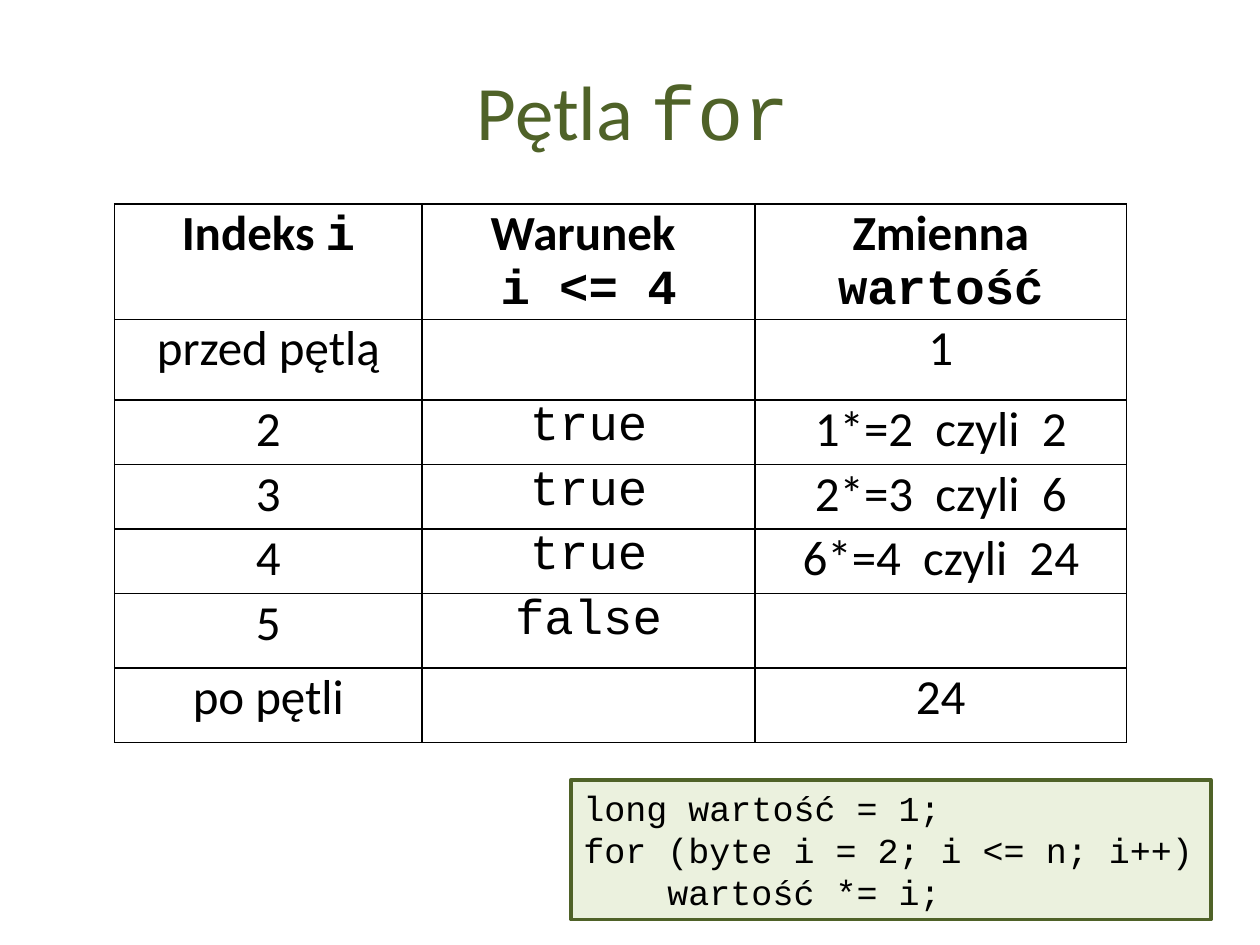
"""Builds the slide that traces a for loop computing a factorial."""
from lxml.etree import SubElement
from pptx import Presentation
from pptx.dml.color import RGBColor
from pptx.enum.shapes import MSO_SHAPE as Preset
from pptx.enum.text import MSO_ANCHOR as Anchor, MSO_AUTO_SIZE as AutoSize, PP_ALIGN as Align
from pptx.oxml.ns import qn
from pptx.util import Cm, Pt

COLORS = {"accent": "4F6228", "code_fill": "EBF1DE", "ink": "000000"}
BODY, CODE = "Calibri", "Courier New"
COLUMN_WIDTHS = [6.2, 6.71, 7.49]
ROW_HEIGHTS = [2.31, 1.63, 1.3, 1.3, 1.3, 1.5, 1.5]
HEADINGS = [
    [("Indeks ", BODY), ("i", CODE)],
    [("Warunek \n", BODY), ("i <= 4", CODE)],
    [("Zmienna ", BODY), ("wartość", CODE)],
]
TRACE = [
    ("przed pętlą", "", "1"),
    ("2", "true", "1*=2  czyli  2"),
    ("3", "true", "2*=3  czyli  6"),
    ("4", "true", "6*=4  czyli  24"),
    ("5", "false", ""),
    ("po pętli", "", "24"),
]
LOOP_CODE = "long wartość = 1;\nfor (byte i = 2; i <= n; i++)\n    wartość *= i;"


def color(name):
    return RGBColor.from_string(COLORS[name])


def style_font(font, face, size, ink, bold=False):
    font.name, font.size, font.bold = face, Pt(size), bold
    font.color.rgb = color(ink)


def write_pieces(paragraph, pieces, size, ink, bold=False):
    paragraph.alignment = Align.CENTER
    for text, face in pieces:
        run = paragraph.add_run()
        run.text = text.rstrip("\n")
        style_font(run.font, face, size, ink, bold)
        if text.endswith("\n"):
            paragraph.add_line_break()


def add_title(slide):
    title = slide.shapes.title
    title.left, title.top, title.width, title.height = Cm(0.51), Cm(1.3), Cm(24.51), Cm(1.83)
    frame = title.text_frame
    frame.auto_size = AutoSize.NONE
    frame.vertical_anchor = Anchor.MIDDLE
    write_pieces(frame.paragraphs[0], [("Pętla ", BODY), ("for", CODE)], 44, "accent")


def add_borders(cell):
    properties = cell._tc.get_or_add_tcPr()
    for side in ("a:lnL", "a:lnR", "a:lnT", "a:lnB"):
        border = SubElement(properties, qn(side), w=str(Pt(1)))
        fill = SubElement(border, qn("a:solidFill"))
        SubElement(fill, qn("a:srgbClr"), val=COLORS["ink"])


def fill_cell(cell, pieces, bold):
    cell.margin_left = cell.margin_right = Cm(0.18)
    cell.margin_top = cell.margin_bottom = 0
    add_borders(cell)
    cell.fill.background()
    paragraph = cell.text_frame.paragraphs[0]
    paragraph.space_after = Pt(6)
    write_pieces(paragraph, pieces, 28, "ink", bold)


def add_trace_table(slide):
    faces = (BODY, CODE, BODY)
    rows = [HEADINGS] + [
        [[(text, face)] if text else [] for text, face in zip(step, faces)] for step in TRACE
    ]
    table = slide.shapes.add_table(
        len(rows), len(COLUMN_WIDTHS), Cm(2.31), Cm(4.11),
        Cm(sum(COLUMN_WIDTHS)), Cm(sum(ROW_HEIGHTS)),
    ).table
    table.first_row = table.horz_banding = False
    for column, width in zip(table.columns, COLUMN_WIDTHS):
        column.width = Cm(width)
    for index, (row, height, contents) in enumerate(zip(table.rows, ROW_HEIGHTS, rows)):
        row.height = Cm(height)
        for cell, pieces in zip(row.cells, contents):
            fill_cell(cell, pieces, bold=index == 0)


def add_code_box(slide):
    listing = slide.shapes.add_shape(Preset.RECTANGLE, Cm(11.51), Cm(15.72), Cm(12.9), Cm(2.82))
    listing.shadow.inherit = False
    listing.fill.solid()
    listing.fill.fore_color.rgb = color("code_fill")
    listing.line.color.rgb = color("accent")
    listing.line.width = Pt(2)
    frame = listing.text_frame
    frame.text = LOOP_CODE
    frame.word_wrap = False
    frame.auto_size = AutoSize.SHAPE_TO_FIT_TEXT
    for paragraph in frame.paragraphs:
        paragraph.alignment = Align.LEFT
        style_font(paragraph.runs[0].font, CODE, 20, "ink")


def main():
    deck = Presentation()
    deck.slide_width, deck.slide_height = Cm(25.4), Cm(19.05)
    slide = deck.slides.add_slide(deck.slide_layouts[5])
    add_title(slide)
    add_trace_table(slide)
    add_code_box(slide)
    deck.save("out.pptx")


if __name__ == "__main__":
    main()
